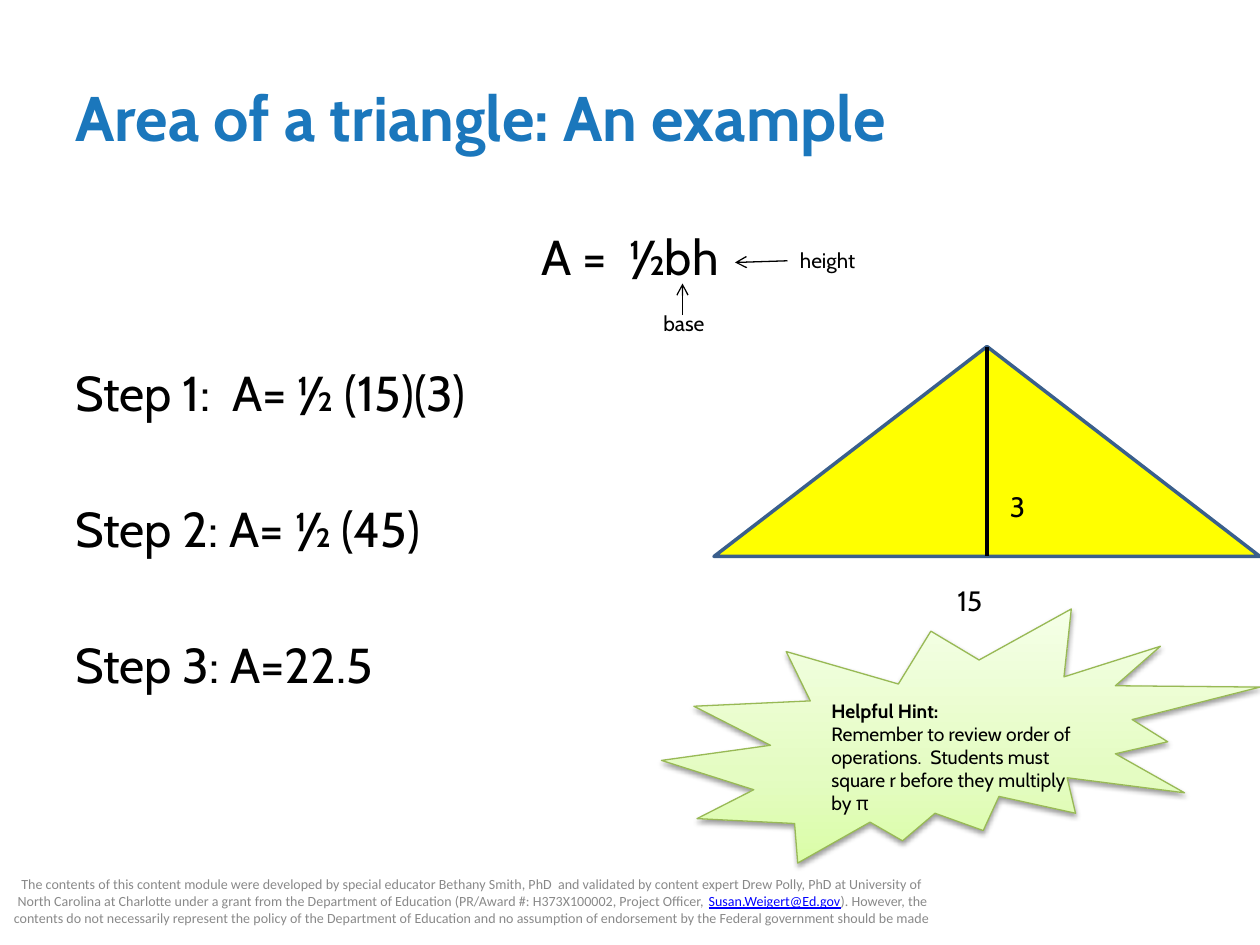
"""Build the slide on the area of a triangle, on a grid of twelfths of an inch."""
from pptx import Presentation
from pptx.dml.color import RGBColor
from pptx.enum.shapes import MSO_CONNECTOR, MSO_SHAPE
from pptx.enum.text import MSO_ANCHOR, MSO_AUTO_SIZE, PP_ALIGN
from pptx.oxml import parse_xml
from pptx.oxml.ns import nsdecls, qn
from pptx.util import Inches, Pt

LEFT, MID = PP_ALIGN.LEFT, PP_ALIGN.CENTER
TOP, CORE = MSO_ANCHOR.TOP, MSO_ANCHOR.MIDDLE
GROW, FIXED = MSO_AUTO_SIZE.SHAPE_TO_FIT_TEXT, MSO_AUTO_SIZE.NONE
PEAK, BURST = MSO_SHAPE.ISOSCELES_TRIANGLE, MSO_SHAPE.EXPLOSION2
STRAIGHT = MSO_CONNECTOR.STRAIGHT

COLS, ROWS = 120, 90
UNIT = Inches(10) / COLS

THEME = {
    "title": {"name": "Cabin", "size": 36, "bold": True, "color": "1B77BC"},
    "body": {"name": "Cabin", "size": 28, "color": "000000"},
    "side": {"name": "Cabin", "size": 16, "color": "000000"},
    "label": {"name": "Cabin", "size": 12, "color": "000000"},
    "hint": {"name": "Cabin", "size": 11, "color": "000000"},
    "head": {"name": "Cabin", "size": 11, "bold": True, "color": "000000"},
    "foot": {"name": "Calibri", "size": 8, "color": "898989"},
    "mail": {"name": "Calibri", "size": 8, "underline": True, "color": "0000FF"},
    "peak": {"fill": "FFFF00", "line": "3A5F8C", "width": 2},
    "burst": {"line": "98B955", "width": 0.75,
              "stops": [(0, "DAFDA7"), (35, "E4FCC2"), (100, "F5FFE7")]},
    "ink": "000000",
    "gap": 44,
}

TITLE = ((6, 3.6, 108, 15), [(LEFT, [("Area of a triangle: An example", "title")])])

TEXTS = [
    ((6, 21, 108, 59.4), TOP, FIXED, THEME["gap"], [
        (MID, [("A =  ½bh", "body")]),
        (LEFT, [("Step 1:  A= ½ (15)(3)", "body")]),
        (LEFT, [("Step 2: A= ½ (45)", "body")]),
        (LEFT, [("Step 3: A=22.5", "body")]),
    ]),
    ((0, 83.4, 90, 4.8), CORE, FIXED, 0, [(MID, [
        ("The contents of this content module were developed by special educator "
         "Bethany Smith, PhD  and validated by content expert Drew Polly, PhD at "
         "University of North Carolina at Charlotte under a grant from the "
         "Department of Education (PR/Award #: H373X100002, Project Officer, ", "foot"),
        ("Susan.Weigert@Ed.gov", "mail"),
        ("). However, the contents do not necessarily represent the policy of the "
         "Department of Education and no assumption of endorsement by the Federal "
         "government should be made", "foot"),
    ])]),
    ((62, 29, 8, 3.6), TOP, GROW, 0, [(LEFT, [("base", "label")])]),
    ((75, 23, 8, 3.6), TOP, GROW, 0, [(LEFT, [("height", "label")])]),
    ((90, 55, 7, 4.4), TOP, GROW, 0, [(LEFT, [("15", "side")])]),
    ((95, 46, 5, 4.4), TOP, GROW, 0, [(LEFT, [("3", "side")])]),
    ((78, 66, 26, 12.4), TOP, GROW, 0, [
        (LEFT, [("Helpful Hint:", "head")]),
        (LEFT, [("Remember to review order of operations.  Students must square r "
                 "before they multiply by π", "hint")]),
    ]),
]

SHAPES = [(BURST, (63, 58, 57, 24.2), "burst"), (PEAK, (68, 33, 52, 20), "peak")]

LINES = [
    ((65, 30, 65, 27), 0.75, True),
    ((75, 24.84, 70, 25), 0.75, True),
    ((94, 33, 94, 53), 2.25, False),
]


def grid(spots):
    """Turn grid steps into lengths."""
    return [round(spot * UNIT) for spot in spots]


def rgb(code):
    """Read a hex colour."""
    return RGBColor.from_string(code)


def style(font, look):
    """Set each value of a look on a font."""
    for name, value in look.items():
        if name == "color":
            font.color.rgb = rgb(value)
        else:
            setattr(font, name, Pt(value) if name == "size" else value)


def write(frame, paras, gap=0):
    """Fill a text frame with aligned paragraphs of styled runs."""
    for i, (align, runs) in enumerate(paras):
        para = frame.add_paragraph() if i else frame.paragraphs[0]
        para.alignment = align
        if i and gap:
            para.space_before = Pt(gap)
        for text, look in runs:
            run = para.add_run()
            run.text = text
            style(run.font, THEME[look])


def blend(shape, stops):
    """Give a shape a rising gradient and a soft shadow."""
    shape.fill.gradient()
    shape.fill.gradient_angle = 90
    props = shape._element.spPr
    bands = props.find(qn("a:gradFill")).find(qn("a:gsLst"))
    for old in list(bands):
        bands.remove(old)
    for spot, code in stops:
        bands.append(parse_xml(
            f'<a:gs {nsdecls("a")} pos="{spot * 1000}"><a:srgbClr val="{code}"/></a:gs>'))
    props.find(qn("a:effectLst")).append(parse_xml(
        f'<a:outerShdw {nsdecls("a")} blurRad="{Pt(3.1)}" dist="{Pt(1.6)}" '
        f'dir="5400000" rotWithShape="0"><a:srgbClr val="{THEME["ink"]}">'
        '<a:alpha val="38000"/></a:srgbClr></a:outerShdw>'))


def draw(slide, kind, box, look):
    """Add a filled and outlined shape."""
    shape = slide.shapes.add_shape(kind, *grid(box))
    shape.shadow.inherit = False
    shape.line.color.rgb = rgb(look["line"])
    shape.line.width = Pt(look["width"])
    if "stops" in look:
        blend(shape, look["stops"])
    else:
        shape.fill.solid()
        shape.fill.fore_color.rgb = rgb(look["fill"])


def link(slide, ends, width, arrow):
    """Add a line, with an arrowhead at its end if asked."""
    line = slide.shapes.add_connector(STRAIGHT, *grid(ends))
    line.line.color.rgb = rgb(THEME["ink"])
    line.line.width = Pt(width)
    if arrow:
        line.line._get_or_add_ln().append(
            parse_xml(f'<a:tailEnd {nsdecls("a")} type="arrow"/>'))
    line._element.spPr.append(parse_xml(f'<a:effectLst {nsdecls("a")}/>'))


def main():
    """Build and save the slide."""
    deck = Presentation()
    deck.slide_width, deck.slide_height = grid((COLS, ROWS))
    slide = deck.slides.add_slide(deck.slide_layouts[5])
    title = slide.shapes.title
    box, paras = TITLE
    title.left, title.top, title.width, title.height = grid(box)
    title.text_frame.vertical_anchor = CORE
    write(title.text_frame, paras)
    for kind, box, look in SHAPES:
        draw(slide, kind, box, THEME[look])
    for ends, width, arrow in LINES:
        link(slide, ends, width, arrow)
    for box, anchor, fit, gap, paras in TEXTS:
        frame = slide.shapes.add_textbox(*grid(box)).text_frame
        form = {"word_wrap": True, "auto_size": fit, "vertical_anchor": anchor}
        for name, value in form.items():
            setattr(frame, name, value)
        write(frame, paras, gap)
    deck.save("out.pptx")


if __name__ == "__main__":
    main()
